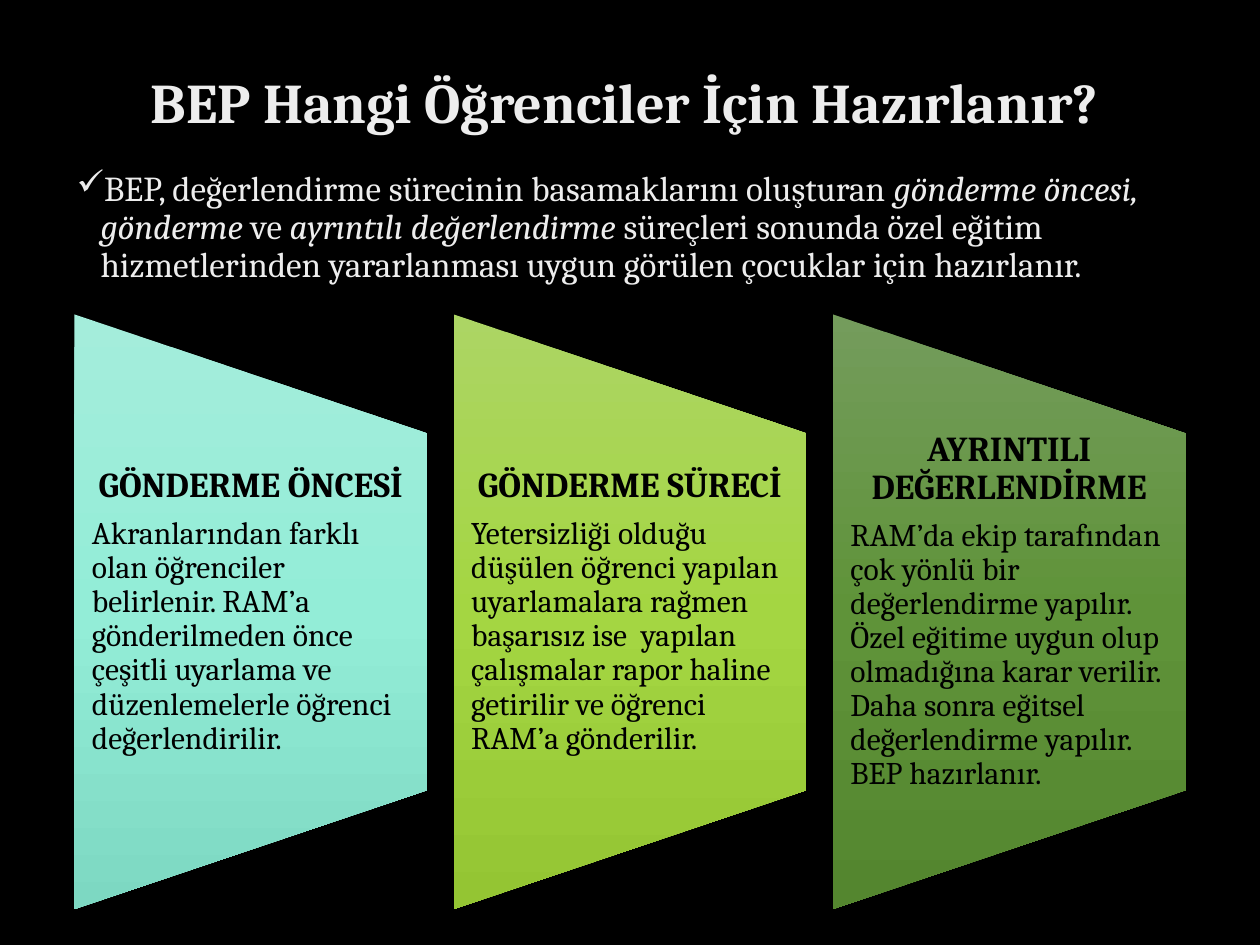
"""Build the slide on which pupils an individual education plan is prepared for."""
import copy

import pptx
import pptx.dml.color
import pptx.enum.shapes
import pptx.enum.text
import pptx.oxml
import pptx.oxml.ns
import pptx.util

ALIGN = pptx.enum.text.PP_ALIGN
ANCHOR = pptx.enum.text.MSO_ANCHOR
BLACK, PALE = "000000", "EDEDED"


def colour(code):
    return pptx.dml.color.RGBColor.from_string(code)


def add_span(para, text, size, code, bold=False, italic=False):
    para.line_spacing = 0.9
    span = para.add_run()
    span.text = text
    span.font.name = "Cambria"
    span.font.size = pptx.util.Pt(size)
    span.font.bold = bold
    span.font.italic = italic
    span.font.color.rgb = colour(code)


deck = pptx.Presentation()
deck.slide_width = pptx.util.Inches(10)
deck.slide_height = pptx.util.Inches(7.5)
page = deck.slides.add_slide(deck.slide_layouts[6])
page.background.fill.solid()
page.background.fill.fore_color.rgb = colour(BLACK)
inch = pptx.util.Inches

title = page.shapes.add_textbox(inch(0.51), inch(0.44), inch(8.9), inch(0.79))
title.text_frame.word_wrap = True
title.text_frame.vertical_anchor = ANCHOR.MIDDLE
para = title.text_frame.paragraphs[0]
para.alignment = ALIGN.CENTER
add_span(para, "BEP Hangi Öğrenciler İçin Hazırlanır?", 32, PALE, bold=True)

intro = page.shapes.add_textbox(inch(0.51), inch(1.31), inch(9.17), inch(1.18))
intro.text_frame.word_wrap = True
para = intro.text_frame.paragraphs[0]
properties = para._p.get_or_add_pPr()
properties.set("marL", str(inch(0.19)))
properties.set("indent", str(-inch(0.19)))
bullet = pptx.oxml.parse_xml(f'<a:buChar {pptx.oxml.ns.nsdecls("a")} char="✓"/>')
properties.append(bullet)
for text, italic in [
    ("BEP, değerlendirme sürecinin basamaklarını oluşturan ", False),
    ("gönderme öncesi, gönderme ", True),
    ("ve", False),
    (" ayrıntılı değerlendirme ", True),
    ("süreçleri sonunda özel eğitim hizmetlerinden yararlanması uygun görülen "
     "çocuklar için hazırlanır.", False),
]:
    add_span(para, text, 20, PALE, italic=italic)

stages = [
    ("GÖNDERME ÖNCESİ",
     "Akranlarından farklı olan öğrenciler belirlenir. RAM’a gönderilmeden önce "
     "çeşitli uyarlama ve düzenlemelerle öğrenci değerlendirilir.",
     ("A4EDDB", "93EDD7", "7DD8C2")),
    ("GÖNDERME SÜRECİ",
     "Yetersizliği olduğu düşülen öğrenci yapılan uyarlamalara rağmen başarısız ise  "
     "yapılan çalışmalar rapor haline getirilir ve öğrenci RAM’a gönderilir.",
     ("ACD564", "A4D642", "94C533")),
    ("AYRINTILI DEĞERLENDİRME",
     "RAM’da ekip tarafından çok yönlü bir değerlendirme yapılır. Özel eğitime uygun "
     "olup olmadığına karar verilir. Daha sonra eğitsel değerlendirme yapılır. "
     "BEP hazırlanır.",
     ("749C5C", "5F9339", "54862F")),
]
first_left, column_step, column_width = 0.59, 3.01, 2.8
panel_length, panel_middle, text_height = 4.72, 4.855, 2.83

for column, (heading, description, shades) in enumerate(stages):
    left = first_left + column * column_step
    panel = page.shapes.add_shape(
        pptx.enum.shapes.MSO_SHAPE.FLOWCHART_MANUAL_OPERATION,
        inch(left + (column_width - panel_length) / 2),
        inch(panel_middle - column_width / 2),
        inch(panel_length), inch(column_width))
    panel.rotation = 270
    panel.shadow.inherit = False
    panel.line.fill.background()
    panel.fill.gradient()
    panel.fill.gradient_angle = 270
    gradient = panel._element.spPr.find(pptx.oxml.ns.qn("a:gradFill"))
    gradient.set("rotWithShape", "0")
    stop_list = gradient.find(pptx.oxml.ns.qn("a:gsLst"))
    stop_list.append(copy.deepcopy(stop_list[-1]))
    for stop, position, shade in zip(panel.fill.gradient_stops, (0, 0.5, 1), shades):
        stop.position = position
        stop.color.rgb = colour(shade)

    box = page.shapes.add_textbox(
        inch(left), inch(panel_middle - text_height / 2),
        inch(column_width), inch(text_height))
    frame = box.text_frame
    frame.word_wrap = True
    frame.vertical_anchor = ANCHOR.MIDDLE
    frame.margin_left = frame.margin_right = inch(0.14)
    frame.margin_top = frame.margin_bottom = 0
    para = frame.paragraphs[0]
    para.alignment = ALIGN.CENTER
    para.space_after = pptx.util.Pt(7)
    add_span(para, heading, 20, BLACK, bold=True)
    para = frame.add_paragraph()
    para.alignment = ALIGN.LEFT
    para.space_after = pptx.util.Pt(7)
    add_span(para, description, 18, BLACK)

deck.save("out.pptx")
